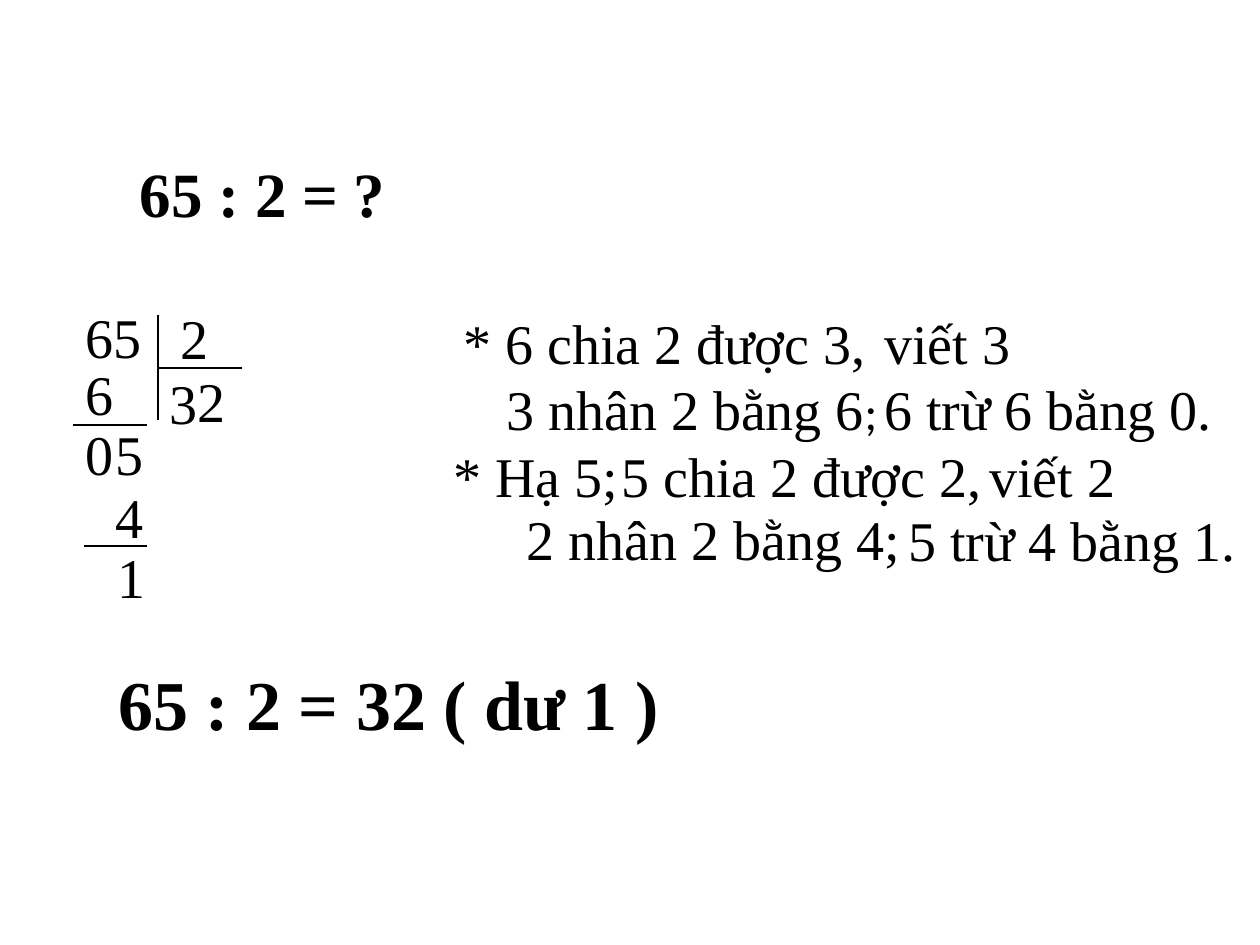
from lxml.etree import SubElement
from pptx import Presentation
from pptx.dml.color import RGBColor
from pptx.enum.shapes import MSO_CONNECTOR
from pptx.enum.text import MSO_ANCHOR, MSO_AUTO_SIZE, PP_ALIGN
from pptx.oxml.ns import qn
from pptx.util import Emu, Pt

BLACK = RGBColor(0, 0, 0)
SERIF = "Times New Roman"
SANS = "Calibri"
ROW_HEIGHT = 79
HEADING_WIDTH, HEADING_HEIGHT = 1071, 126

QUESTION = ("65 : 2 = ?", -273, 129, 36)
ANSWER = ("65 : 2 = 32 ( dư 1 )", -147, 640, 40)

DIVISION = [
    ("65", 73, 296, 95),
    ("2", 168, 297, 42),
    ("3", 157, 362, 42),
    ("2", 185, 360, 84),
    ("6", 73, 353, 73),
    ("0", 73, 413, 53),
    ("5", 103, 413, 53),
    ("4", 103, 476, 63),
    ("1", 105, 536, 63),
]
EXPLANATION = [
    ("* 6 chia 2 được 3,", 451, 302, 473),
    ("viết 3", 872, 302, 262),
    ("3 nhân 2 bằng 6", 494, 368, 441),
    ("6 trừ 6 bằng 0.", 872, 368, 441),
    ("* Hạ 5;", 441, 435, 262),
    ("5 chia 2 được 2,", 609, 435, 451),
    ("viết 2", 977, 435, 221),
    ("2 nhân 2 bằng 4;", 514, 498, 462),
    (" 5 trừ 4 bằng 1.", 882, 499, 399),
]
SMALL_ENDINGS = {"3 nhân 2 bằng 6": ";"}
RULES = [
    (158, 315, 158, 420),
    (158, 368, 242, 368),
    (73, 425, 147, 425),
    (84, 546, 147, 546),
]


def px(length):
    return Emu(round(length * 914400 / 126))


def place(box, left, top, width, height):
    box.left, box.top, box.width, box.height = map(px, (left, top, width, height))


def add_span(para, text, size=32, font=SERIF, bold=False):
    span = para.add_run()
    span.text = text
    span.font.name = font
    span.font.size = Pt(size)
    span.font.bold = bold
    span.font.color.rgb = BLACK


def write_heading(box, text, left, top, size):
    place(box, left, top, HEADING_WIDTH, HEADING_HEIGHT)
    frame = box.text_frame
    frame.word_wrap = True
    frame.auto_size = MSO_AUTO_SIZE.NONE
    frame.vertical_anchor = MSO_ANCHOR.MIDDLE
    para = frame.paragraphs[0]
    para.alignment = PP_ALIGN.CENTER
    add_span(para, text, size=size, bold=True)


def add_step(page, text, left, top, width):
    box = page.shapes.add_textbox(*map(px, (left, top, width, ROW_HEIGHT)))
    frame = box.text_frame
    frame.word_wrap = True
    frame.auto_size = MSO_AUTO_SIZE.SHAPE_TO_FIT_TEXT
    para = frame.paragraphs[0]
    add_span(para, text)
    if text in SMALL_ENDINGS:
        add_span(para, SMALL_ENDINGS[text], size=28, font=SANS)


def add_rule(page, *ends):
    rule = page.shapes.add_connector(MSO_CONNECTOR.STRAIGHT, *map(px, ends))
    rule.line.color.rgb = BLACK
    rule.line.width = Pt(0.75)
    SubElement(rule._element.spPr, qn("a:effectLst"))


def main():
    deck = Presentation()
    deck.slide_width, deck.slide_height = px(1260), px(945)
    page = deck.slides.add_slide(deck.slide_layouts[5])

    write_heading(page.shapes.title, *QUESTION)
    for step in DIVISION + EXPLANATION:
        add_step(page, *step)
    for ends in RULES:
        add_rule(page, *ends)
    write_heading(page.shapes.add_textbox(0, 0, 0, 0), *ANSWER)

    deck.save("out.pptx")


if __name__ == "__main__":
    main()
